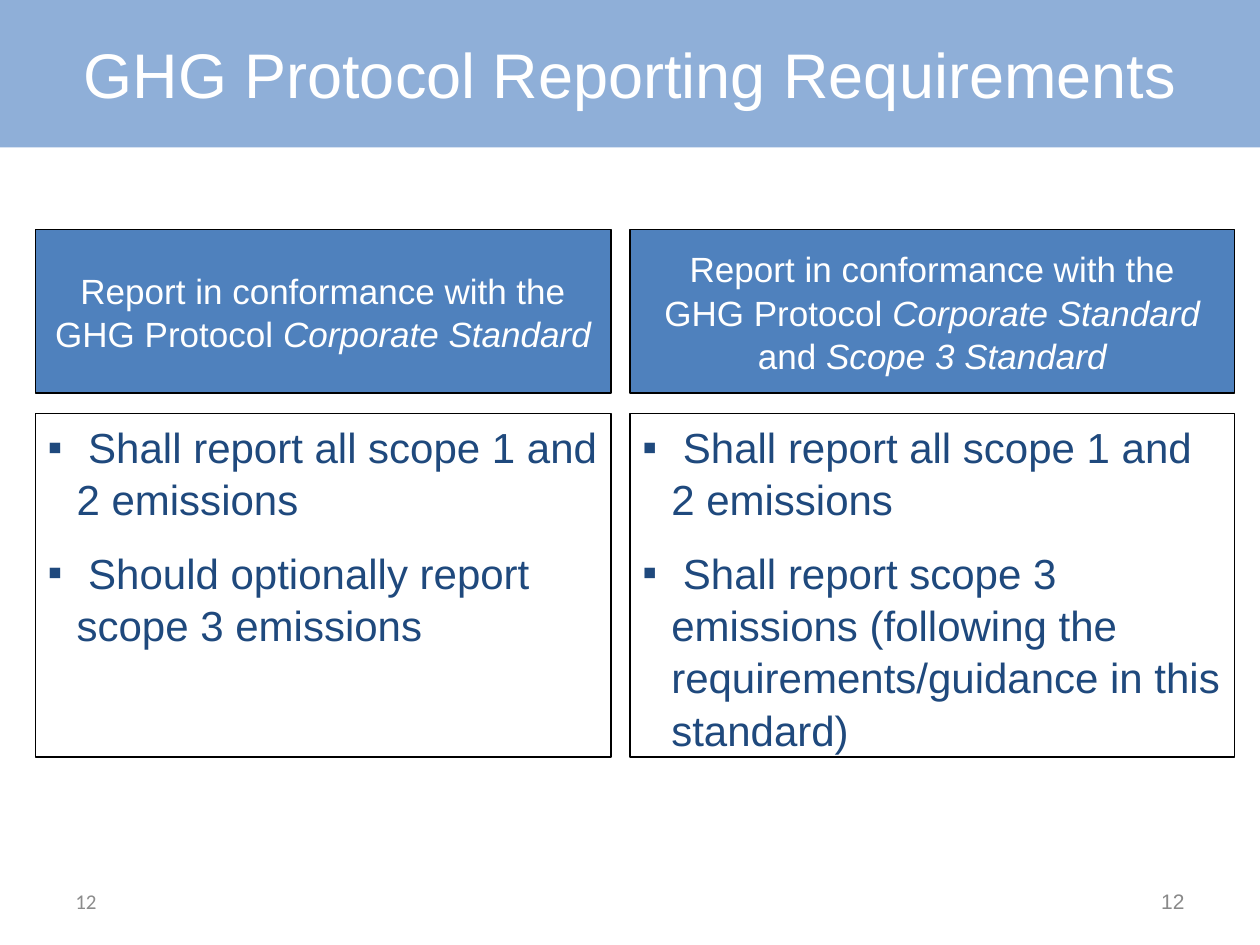
import lxml.etree
import pptx
import pptx.dml.color
import pptx.enum.shapes
import pptx.enum.text
import pptx.oxml.ns
import pptx.util

ALIGN = pptx.enum.text.PP_ALIGN
ANCHOR = pptx.enum.text.MSO_ANCHOR
WIDTH, HEIGHT = 10, 7.5

# Left and width of each column, top and height of each row, in inches
COLUMNS = [(0.28, 4.57), (5, 4.8)]
ROWS = {"heading": (1.82, 1.3), "points": (3.28, 2.73)}


def colour(value):
    return pptx.dml.color.RGBColor.from_string(value)


class Page:
    """The current slide together with its style."""

    font = "Arial"
    band, accent, ink, edge, white = "8FAFD8", "4F81BD", "1F497D", "000000", "FFFFFF"
    line_spacing = 1.04

    def __init__(self, deck):
        self.slide = deck.slides.add_slide(deck.slide_layouts[5])

    def area(self, *lengths):
        return [pptx.util.Inches(length) for length in lengths]

    def format(self, para, size, shade, align=ALIGN.LEFT, font=None):
        para.alignment = align
        for span in para.runs:
            span.font.name = font or self.font
            span.font.size = pptx.util.Pt(size)
            span.font.color.rgb = colour(shade)

    def title(self, text):
        box = self.slide.shapes.title
        box.left, box.top, box.width, box.height = self.area(0, 0, WIDTH, 1.17)
        box.fill.solid()
        box.fill.fore_color.rgb = colour(self.band)
        frame = box.text_frame
        frame.text = text
        frame.vertical_anchor = ANCHOR.MIDDLE
        self.format(frame.paragraphs[0], 36, self.white, ALIGN.CENTER)

    def panel(self, column, row, fill=None):
        (left, width), (top, height) = COLUMNS[column], ROWS[row]
        box = self.slide.shapes.add_shape(
            pptx.enum.shapes.MSO_SHAPE.RECTANGLE, *self.area(left, top, width, height))
        box.shadow.inherit = False
        if fill:
            box.fill.solid()
            box.fill.fore_color.rgb = colour(fill)
        else:
            box.fill.background()
        box.line.color.rgb = colour(self.edge)
        box.line.width = pptx.util.Pt(0.75)
        return box.text_frame

    def heading(self, column, lines):
        """Each line is a pair: upright text, then italic text."""
        frame = self.panel(column, "heading", self.accent)
        frame.word_wrap = False
        frame.vertical_anchor = ANCHOR.MIDDLE
        for index, (upright, italic) in enumerate(lines):
            para = frame.add_paragraph() if index else frame.paragraphs[0]
            para.text = upright
            if italic:
                span = para.add_run()
                span.text = italic
                span.font.italic = True
            para.line_spacing = self.line_spacing
            self.format(para, 20, self.white, ALIGN.CENTER)

    def points(self, column, texts):
        frame = self.panel(column, "points")
        frame.word_wrap = True
        frame.vertical_anchor = ANCHOR.TOP
        for index, text in enumerate(texts):
            para = frame.add_paragraph() if index else frame.paragraphs[0]
            para.text = text
            para.line_spacing = self.line_spacing
            if index:
                para.space_before = pptx.util.Pt(12)
            self.bullet(para)
            self.format(para, 24, self.ink)

    def bullet(self, para, indent=0.23):
        properties = para._p.get_or_add_pPr()
        properties.set("marL", str(pptx.util.Inches(indent)))
        properties.set("indent", str(-pptx.util.Inches(indent)))
        for tag, name, value in (("a:buFont", "typeface", self.font),
                                 ("a:buChar", "char", "▪")):
            lxml.etree.SubElement(properties, pptx.oxml.ns.qn(tag)).set(name, value)

    def number(self, left, text, shade, align, font):
        box = self.slide.shapes.add_textbox(*self.area(left, 6.95, 2.33, 0.4))
        frame = box.text_frame
        frame.word_wrap = True
        frame.vertical_anchor = ANCHOR.MIDDLE
        frame.text = text
        self.format(frame.paragraphs[0], 12, shade, align, font)


def main():
    deck = pptx.Presentation()
    deck.slide_width = pptx.util.Inches(WIDTH)
    deck.slide_height = pptx.util.Inches(HEIGHT)
    page = Page(deck)
    page.title("GHG Protocol Reporting Requirements")

    # One column for each way of reporting
    opening = [("Report in conformance with the", ""),
               ("GHG Protocol ", "Corporate Standard")]
    shared = " Shall report all scope 1 and 2 emissions"
    page.heading(0, opening)
    page.points(0, [shared, " Should optionally report scope 3 emissions"])
    page.heading(1, opening + [("and ", "Scope 3 Standard")])
    page.points(1, [shared, " Shall report scope 3 emissions (following the "
                            "requirements/guidance in this standard)"])

    # Page numbers
    page.number(0.5, "12", "8C8C8C", ALIGN.LEFT, "Calibri")
    page.number(7.17, "12", "898989", ALIGN.RIGHT, "Arial")
    deck.save("out.pptx")


if __name__ == "__main__":
    main()
